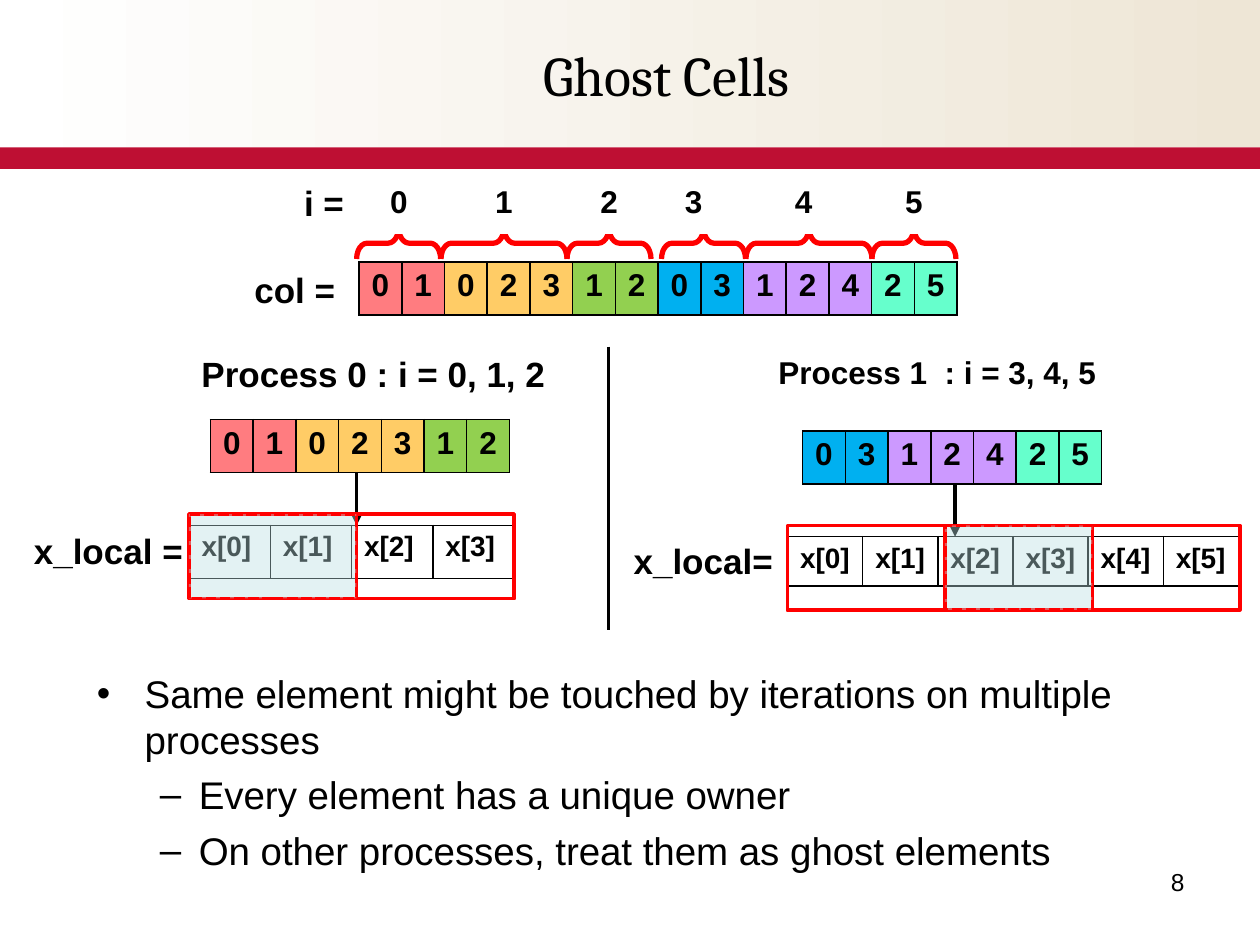
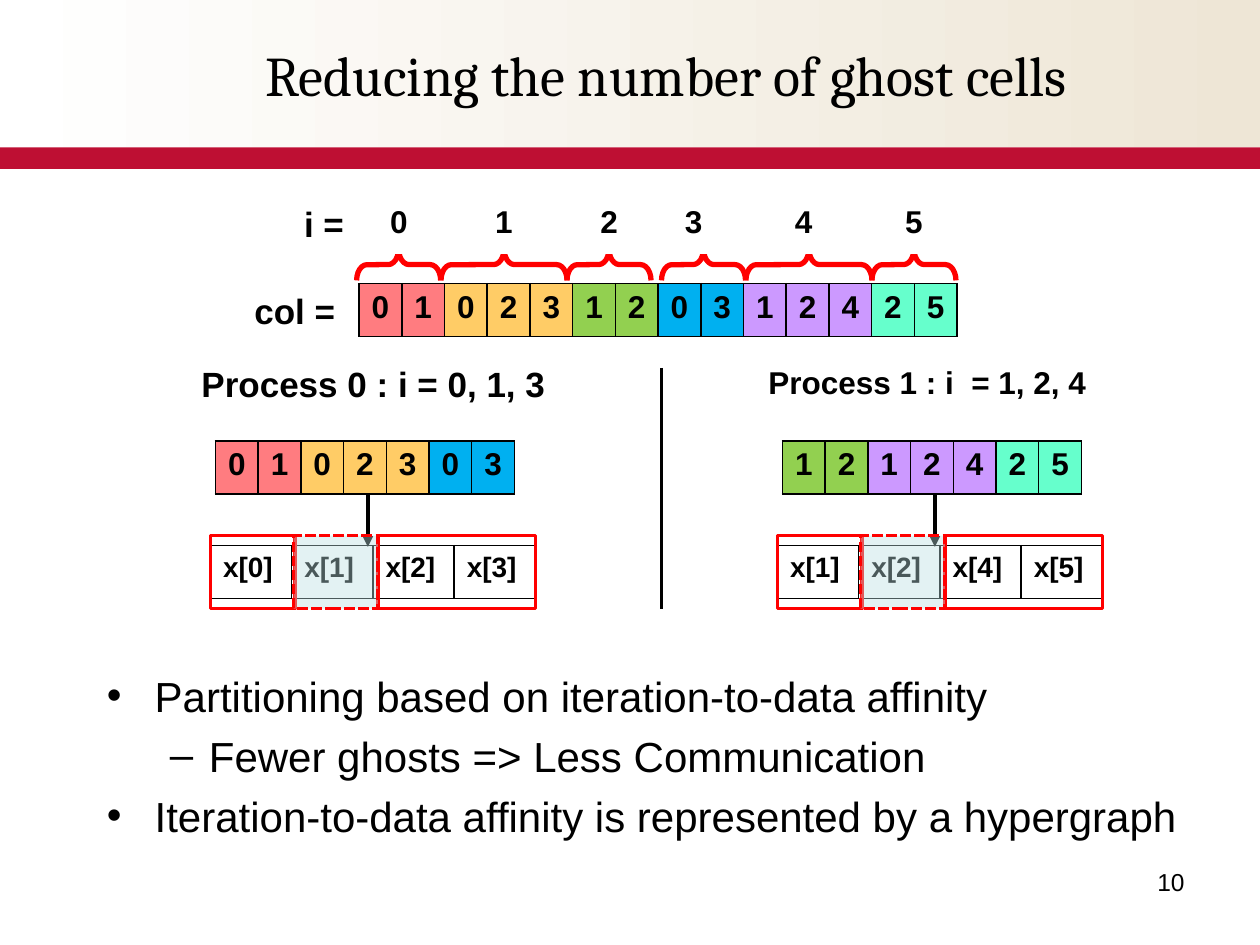
from dataclasses import dataclass
from itertools import accumulate

from lxml import etree
from pptx import Presentation
from pptx import util as u
from pptx.dml import color
from pptx.enum import shapes, text
from pptx.oxml import ns
from pptx.slide import Slide

COLORS = {
    "black": "000000", "white": "FFFFFF", "cream": "EEE6D6", "crimson": "BE0F33",
    "frame": "FF0000", "ghost": "BBE0E3", "coral": "FF7C80", "amber": "FFCC66",
    "green": "92D050", "blue": "00B0F0", "violet": "CC99FF", "mint": "66FFCC",
}
BODY_FONT = "Arial"
TITLE_FONT = "Cambria"
LEFT, CENTER, RIGHT = text.PP_ALIGN.LEFT, text.PP_ALIGN.CENTER, text.PP_ALIGN.RIGHT
CELL_WIDTH = 4.75 / 14
ROW_HEIGHT = 0.42
BRACE_DEPTH = 0.25
INDENTS = [("•", 0.38, -0.38), ("–", 0.81, -0.31)]
INDEX_WIDTHS = [1.08, 0.67, 1, 0.67, 0.67, 1.08, 0.67]


@dataclass(frozen=True)
class Iteration:
    color: str
    columns: str
    brace_left: float


@dataclass(frozen=True)
class Cell:
    text: str
    fill: str = "white"
    size: int = 18
    align: text.PP_ALIGN = CENTER


@dataclass(frozen=True)
class Label:
    text: str
    left: float
    top: float
    width: float
    size: int = 20


@dataclass(frozen=True)
class Process:
    heading: Label
    iterations: tuple[int, ...]
    columns_left: float
    columns_top: float
    arrow_left: float
    elements: tuple[int, ...]
    local_left: float
    local_top: float
    local_width: float
    local_height: float
    frames: tuple[tuple[float, float], ...]
    ghost: tuple[float, float]
    frame_top: float
    frame_height: float


@dataclass(frozen=True)
class Page:
    title: str
    number: int
    index_top: float
    columns_top: float
    divider: tuple[float, float, float]
    labels: tuple[Label, ...]
    processes: tuple[Process, ...]
    body_left: float
    body_size: int
    bullets: tuple[tuple[int, str], ...]


ITERATIONS = [
    Iteration("coral", "01", 2.83),
    Iteration("amber", "023", 3.5),
    Iteration("green", "12", 4.5),
    Iteration("blue", "03", 5.25),
    Iteration("violet", "124", 5.92),
    Iteration("mint", "25", 6.92),
]

PAGES = [
    Page(
        "Ghost Cells", 8, 1.42, 2.08, (4.83, 2.75, 5),
        (Label("x_local =", 0.17, 4.15, 1.39), Label("x_local=", 4.93, 4.23, 1.32)),
        (
            Process(Label("Process 0 : i = 0, 1, 2", 1.5, 2.75, 2.95), (0, 1, 2),
                    1.67, 3.33, 2.83, (0, 1, 2, 3), 1.5, 4.17, 2.58, 0.42,
                    ((1.5, 2.58), (2.83, 1.25)), (1.5, 1.33), 4.08, 0.67),
            Process(Label("Process 1  : i = 3, 4, 5", 6.08, 2.75, 2.75, 18), (3, 4, 5),
                    6.37, 3.42, 7.58, (0, 1, 2, 3, 4, 5), 6.25, 4.26, 3.58, 0.39,
                    ((6.25, 2.42), (6.25, 1.25), (8.67, 1.17)), (7.5, 1.17), 4.17, 0.67),
        ),
        0.67, 22,
        (
            (0, "Same element might be touched by iterations on multiple processes"),
            (1, "Every element has a unique owner"),
            (1, "On other processes, treat them as ghost elements"),
        ),
    ),
    Page(
        "Reducing the number of ghost cells", 10, 1.58, 2.25, (5.25, 2.92, 4.83),
        (),
        (
            Process(Label("Process 0 : i = 0, 1, 3", 1.5, 2.83, 2.95), (0, 1, 3),
                    1.71, 3.5, 2.92, (0, 1, 2, 3), 1.67, 4.33, 2.58, 0.42,
                    ((1.67, 0.67), (3, 1.25)), (2.33, 0.67), 4.25, 0.58),
            Process(Label("Process 1 : i  = 1, 2, 4", 6, 2.83, 2.82, 18), (2, 4, 5),
                    6.21, 3.5, 7.42, (1, 2, 4, 5), 6.17, 4.33, 2.58, 0.42,
                    ((6.17, 0.67), (7.5, 1.25)), (6.83, 0.67), 4.25, 0.58),
        ),
        0.75, 24,
        (
            (0, "Partitioning based on iteration-to-data affinity"),
            (1, "Fewer ghosts => Less Communication"),
            (0, "Iteration-to-data affinity is represented by a hypergraph"),
        ),
    ),
]


def rgb(name: str) -> color.RGBColor:
    return color.RGBColor.from_string(COLORS[name])


def add_run(paragraph, content: str, size: int, bold: bool = False, font: str = BODY_FONT) -> None:
    run = paragraph.add_run()
    run.text = content
    run.font.name = font
    run.font.size = u.Pt(size)
    run.font.bold = bold
    run.font.color.rgb = rgb("black")


def add_text_frame(slide: Slide, left: float, top: float, width: float, height: float,
                   wrap: bool = True):
    box = slide.shapes.add_textbox(*map(u.Inches, (left, top, width, height)))
    box.text_frame.word_wrap = wrap
    return box.text_frame


def add_label(slide: Slide, label: Label) -> None:
    frame = add_text_frame(slide, label.left, label.top, label.width, 0.44, wrap=False)
    add_run(frame.paragraphs[0], label.text, label.size, bold=True)


def add_shape(slide: Slide, kind: shapes.MSO_SHAPE, left: float, top: float, width: float,
              height: float, fill: str | None = None, line_width: float = 0):
    shape = slide.shapes.add_shape(kind, *map(u.Inches, (left, top, width, height)))
    shape.shadow.inherit = False
    if fill:
        shape.fill.solid()
        shape.fill.fore_color.rgb = rgb(fill)
    else:
        shape.fill.background()
    if line_width:
        shape.line.color.rgb = rgb("frame")
        shape.line.width = u.Pt(line_width)
    else:
        shape.line.fill.background()
    return shape


def add_line(slide: Slide, left: float, top: float, bottom: float, arrow: bool = False) -> None:
    connector = slide.shapes.add_connector(
        shapes.MSO_CONNECTOR.STRAIGHT, *map(u.Inches, (left, top, left, bottom)))
    connector.line.color.rgb = rgb("black")
    connector.line.width = u.Pt(2)
    if arrow:
        etree.SubElement(connector.line._get_or_add_ln(), ns.qn("a:tailEnd"), type="triangle")
    etree.SubElement(connector._element.spPr, ns.qn("a:effectLst"))


def add_border(cell) -> None:
    properties = cell._tc.get_or_add_tcPr()
    for side in ("lnL", "lnR", "lnT", "lnB"):
        line = etree.SubElement(properties, ns.qn(f"a:{side}"), w=str(u.Pt(1)))
        fill = etree.SubElement(line, ns.qn("a:solidFill"))
        etree.SubElement(fill, ns.qn("a:srgbClr"), val=COLORS["black"])


def add_row(slide: Slide, cells: list[Cell], left: float, top: float, widths: list[float],
            height: float = ROW_HEIGHT, bordered: bool = True) -> None:
    table = slide.shapes.add_table(
        1, len(cells), *map(u.Inches, (left, top, sum(widths), height))).table
    table.first_row = False
    table.horz_banding = False
    for index, (content, width) in enumerate(zip(cells, widths)):
        table.columns[index].width = u.Inches(width)
        cell = table.cell(0, index)
        if content.align == CENTER:
            cell.margin_left = u.Inches(0.05)
        if content.align != RIGHT:
            cell.margin_right = u.Inches(0.05)
        if bordered:
            add_border(cell)
        cell.fill.solid()
        cell.fill.fore_color.rgb = rgb(content.fill)
        paragraph = cell.text_frame.paragraphs[0]
        paragraph.alignment = content.align
        add_run(paragraph, content.text, content.size, bold=True)


def add_columns(slide: Slide, iterations: list[Iteration], left: float, top: float) -> None:
    cells = [Cell(column, item.color) for item in iterations for column in item.columns]
    add_row(slide, cells, left, top, [CELL_WIDTH] * len(cells))


def add_index(slide: Slide, page: Page) -> None:
    for iteration in ITERATIONS:
        span = len(iteration.columns) / 3
        center_x = iteration.brace_left + span / 2
        center_y = page.columns_top - 0.15
        brace = add_shape(slide, shapes.MSO_SHAPE.LEFT_BRACE, center_x - BRACE_DEPTH / 2,
                          center_y - span / 2, BRACE_DEPTH, span, line_width=3)
        brace.adjustments[0] = 0.33
        brace.rotation = 90
    cells = [Cell("i =", size=20, align=RIGHT)]
    cells += [Cell(str(index)) for index in range(len(ITERATIONS))]
    add_row(slide, cells, 1.75, page.index_top, INDEX_WIDTHS, bordered=False)


def add_process(slide: Slide, process: Process) -> None:
    add_label(slide, process.heading)
    add_columns(slide, [ITERATIONS[index] for index in process.iterations],
                process.columns_left, process.columns_top)
    cells = [Cell(f"x[{index}]", size=16, align=LEFT) for index in process.elements]
    add_row(slide, cells, process.local_left, process.local_top,
            [process.local_width / len(cells)] * len(cells), process.local_height)
    arrow_top = process.columns_top + ROW_HEIGHT
    add_line(slide, process.arrow_left, arrow_top, arrow_top + 0.42, arrow=True)
    for left, width in process.frames:
        add_shape(slide, shapes.MSO_SHAPE.RECTANGLE, left, process.frame_top, width,
                  process.frame_height, line_width=2)
    left, width = process.ghost
    ghost = add_shape(slide, shapes.MSO_SHAPE.RECTANGLE, left, process.frame_top, width,
                      process.frame_height, "ghost", 2)
    tint = ghost._element.spPr.find(f"{ns.qn('a:solidFill')}/{ns.qn('a:srgbClr')}")
    etree.SubElement(tint, ns.qn("a:alpha"), val="40000")
    etree.SubElement(ghost.line._get_or_add_ln(), ns.qn("a:prstDash"), val="sysDash")


def add_header(slide: Slide, title: str) -> None:
    banner = add_shape(slide, shapes.MSO_SHAPE.RECTANGLE, 0, 0, 10, 1.17)
    banner.fill.gradient()
    banner.fill.gradient_angle = 0
    for stop, name in zip(banner.fill.gradient_stops, ("white", "cream")):
        stop.color.rgb = rgb(name)
    add_shape(slide, shapes.MSO_SHAPE.RECTANGLE, 0, 1.17, 10, 0.17, "crimson")
    frame = add_text_frame(slide, 1.08, 0.25, 8.42, 0.67)
    frame.vertical_anchor = text.MSO_ANCHOR.MIDDLE
    frame.paragraphs[0].alignment = CENTER
    add_run(frame.paragraphs[0], title, 32, font=TITLE_FONT)


def add_bullets(slide: Slide, page: Page) -> None:
    frame = add_text_frame(slide, page.body_left, 5.27, 9, 1.8)
    for index, (level, content) in enumerate(page.bullets):
        paragraph = frame.add_paragraph() if index else frame.paragraphs[0]
        mark, margin, indent = INDENTS[level]
        properties = paragraph._p.get_or_add_pPr()
        properties.set("marL", str(u.Inches(margin)))
        properties.set("indent", str(u.Inches(indent)))
        etree.SubElement(properties, ns.qn("a:buFont"), typeface=BODY_FONT)
        etree.SubElement(properties, ns.qn("a:buChar"), char=mark)
        paragraph.level = level
        if index:
            paragraph.space_before = u.Pt(round(page.body_size * 0.23, 1))
        add_run(paragraph, content, page.body_size)


def add_page_number(slide: Slide, number: int) -> None:
    paragraph = add_text_frame(slide, 7.17, 6.83, 2.33, 0.52).paragraphs[0]
    paragraph.alignment = RIGHT
    add_run(paragraph, str(number), 14)


def build_page(slide: Slide, page: Page) -> None:
    add_header(slide, page.title)
    add_bullets(slide, page)
    add_page_number(slide, page.number)
    for label in (Label("col =", 1.92, page.columns_top, 0.85), *page.labels):
        add_label(slide, label)
    add_columns(slide, ITERATIONS, list(accumulate([1.75, INDEX_WIDTHS[0]]))[-1] + 0.02,
                page.columns_top)
    add_index(slide, page)
    add_line(slide, *page.divider)
    for process in page.processes:
        add_process(slide, process)


def main() -> None:
    presentation = Presentation()
    presentation.slide_width = u.Inches(10)
    presentation.slide_height = u.Inches(7.5)
    for page in PAGES:
        build_page(presentation.slides.add_slide(presentation.slide_layouts[6]), page)
    presentation.save("out.pptx")


if __name__ == "__main__":
    main()
